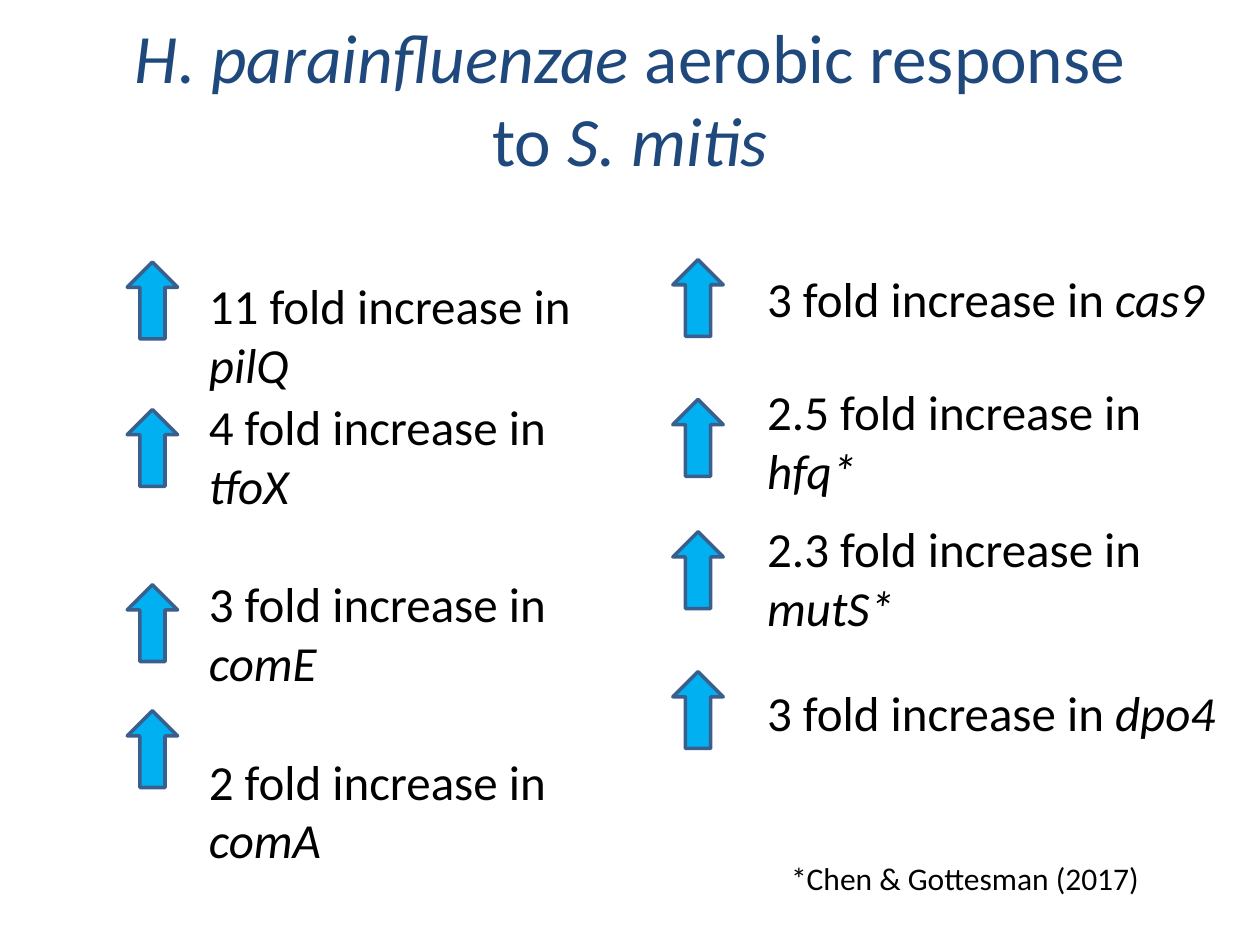
from pptx import Presentation
from pptx.dml.color import RGBColor
from pptx.enum.shapes import MSO_SHAPE
from pptx.enum.text import MSO_ANCHOR, PP_ALIGN
from pptx.util import Inches, Pt

NAVY = RGBColor(0x1F, 0x49, 0x7D)
SKY = RGBColor(0x00, 0xB0, 0xF0)
EDGE = RGBColor(0x3A, 0x5F, 0x8C)
BLACK = RGBColor(0, 0, 0)

# Content: runs are (text, italic)
TITLE = [("H. parainfluenzae ", True), ("aerobic response to ", False),
         ("S. mitis", True)]
NOTE = [("*Chen & Gottesman (2017)", False)]

# Columns: arrow left, text left, text width, arrow tops,
# and text boxes as (top, [(fold, gene), ...])
COLS = [
    (1.01, 1.56, 3.17, [2.08, 3.25, 4.64, 5.64],
     [(2.14, [("11", "pilQ")]),
      (3.1, [("4", "tfoX"), ("3", "comE"), ("2", "comA")])]),
    (5.34, 5.99, 3.78, [2.06, 3.17, 4.22, 5.33],
     [(2.08, [("3", "cas9")]), (2.98, [("2.5", "hfq*")]),
      (4.07, [("2.3", "mutS*")]), (5.37, [("3", "dpo4")])]),
]
ARROW = (0.4, 0.61)
LINE = 0.47  # height of one text line
GAP = Pt(34)  # one empty line between genes

deck = Presentation()
deck.slide_width, deck.slide_height = Inches(10), Inches(7.5)
slide = deck.slides.add_slide(deck.slide_layouts[6])


def add_text(home, area, paras, size, color=BLACK, align=PP_ALIGN.LEFT,
             anchor=MSO_ANCHOR.TOP):
    frame = home.add_textbox(*map(Inches, area)).text_frame
    frame.word_wrap = True
    frame.vertical_anchor = anchor
    for i, runs in enumerate(paras):
        para = frame.add_paragraph() if i else frame.paragraphs[0]
        para.alignment = align
        para.space_before = GAP if i else Pt(0)
        para.font.name, para.font.size = "Calibri", Pt(size)
        para.font.color.rgb = color
        for text, slant in runs:
            run = para.add_run()
            run.text, run.font.italic = text, slant


def add_arrow(home, left, top):
    arrow = home.add_shape(MSO_SHAPE.UP_ARROW,
                           *map(Inches, (left, top, *ARROW)))
    arrow.shadow.inherit = False
    arrow.fill.solid()
    arrow.fill.fore_color.rgb = SKY
    arrow.line.color.rgb = EDGE
    arrow.line.width = Pt(2)


# Title
add_text(slide.shapes, (0.69, 0.05, 8.62, 1.45), [TITLE], 39.6, NAVY,
         PP_ALIGN.CENTER, MSO_ANCHOR.MIDDLE)

# One group of arrows and gene texts per column
for x, text_x, width, tops, boxes in COLS:
    group = slide.shapes.add_group_shape().shapes
    for top in tops:
        add_arrow(group, x, top)
    for top, genes in boxes:
        paras = [[(f"{fold} fold increase in ", False), (gene, True)]
                 for fold, gene in genes]
        high = 0.1 + LINE * (3 * len(genes) - 1)
        add_text(group, (text_x, top, width, high), paras, 28)

# Citation
add_text(slide.shapes, (6.18, 6.77, 3.6, 0.4), [NOTE], 18)

deck.save("out.pptx")
